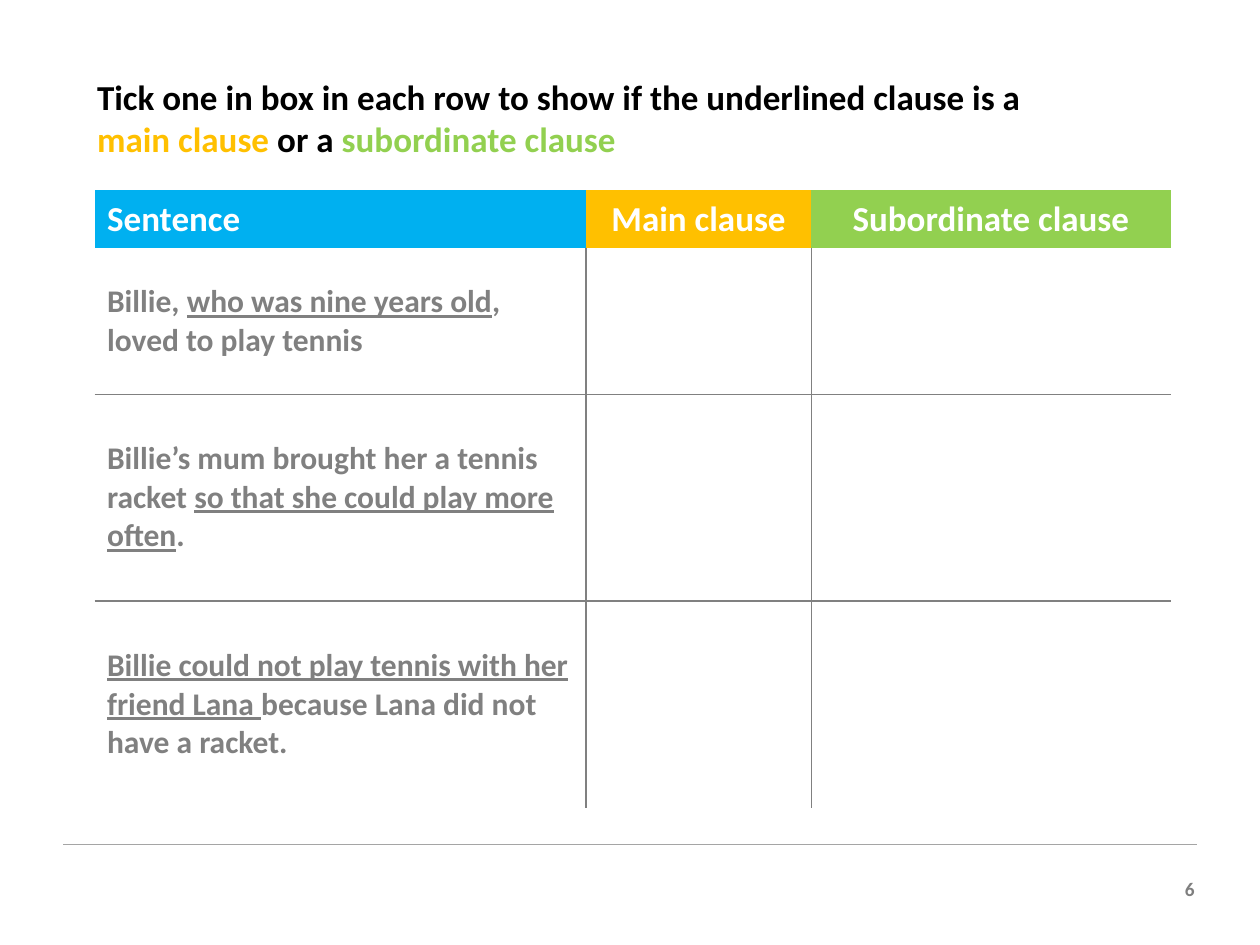
from pptx import Presentation
from pptx.dml.color import RGBColor
from pptx.enum.shapes import MSO_CONNECTOR
from pptx.enum.text import MSO_ANCHOR, MSO_AUTO_SIZE, PP_ALIGN
from pptx.oxml import parse_xml
from pptx.oxml.ns import nsdecls
from pptx.util import Inches, Pt

LINE = MSO_CONNECTOR.STRAIGHT
TOP, MIDDLE = MSO_ANCHOR.TOP, MSO_ANCHOR.MIDDLE
LEFT, CENTER, RIGHT = PP_ALIGN.LEFT, PP_ALIGN.CENTER, PP_ALIGN.RIGHT
TITLE_ONLY = 5
NO_GRID = "{2D5ABB26-0587-4C30-8999-92F81FD0307C}"

BLACK, WHITE, GRAY = "000000", "FFFFFF", "808080"
BLUE, AMBER, GREEN = "00B0F0", "FFC000", "92D050"
COLS = [3.9, 1.79, 2.85]
ROWS = [0.46, 1.16, 1.64, 1.64]

TITLE = [
    ("Tick one in box in each row to show if the underlined clause is a ", BLACK),
    ("main clause", AMBER),
    (" or a ", BLACK),
    ("subordinate clause", GREEN),
]
HEADS = [("Sentence", BLUE), ("Main clause", AMBER), ("Subordinate clause", GREEN)]
# Each sentence is a list of (text, underlined) parts.
SENTENCES = [
    [("Billie, ", False), ("who was nine years old", True),
     (", loved to play tennis", False)],
    [("Billie’s mum brought her a tennis racket ", False),
     ("so that she could play more often", True), (".", False)],
    [("Billie could not play tennis with her friend Lana ", True),
     ("because Lana did not have a racket.", False)],
]


def color(code):
    return RGBColor.from_string(code)


def write(frame, parts, size, align=LEFT):
    """Fill the first paragraph with bold (text, colour, underlined) runs."""
    para = frame.paragraphs[0]
    para.alignment = align
    for text, code, under in parts:
        run = para.add_run()
        run.text = text
        font = run.font
        font.name, font.size, font.bold = "Calibri", Pt(size), True
        font.color.rgb = color(code)
        if under:
            font.underline = True


def add_title(slide):
    title = slide.shapes.title
    title.left, title.top = Inches(0.67), Inches(0.55)
    title.width, title.height = Inches(7.65), Inches(0.77)
    frame = title.text_frame
    frame.vertical_anchor = TOP
    frame.auto_size = MSO_AUTO_SIZE.NONE
    write(frame, [(text, code, False) for text, code in TITLE], 20)


def add_border(cell, sides):
    """Draw thin gray edges on the given sides, listed in L, R, T, B order."""
    props = cell._tc.get_or_add_tcPr()
    for side in sides:
        props.append(parse_xml(
            f'<a:ln{side} {nsdecls("a")} w="{Pt(1)}"><a:solidFill>'
            f'<a:srgbClr val="{GRAY}"/></a:solidFill></a:ln{side}>'))


def paint(cell, code):
    cell.fill.solid()
    cell.fill.fore_color.rgb = color(code)
    cell.vertical_anchor = MIDDLE


def inner_sides(row, col):
    """Name the sides of a body cell that face another body cell."""
    tests = {"L": col > 0, "R": col < len(COLS) - 1,
             "T": row > 1, "B": row < len(ROWS) - 1}
    return [side for side, inner in tests.items() if inner]


def add_grid(slide):
    frame = slide.shapes.add_table(
        len(ROWS), len(COLS), Inches(0.75), Inches(1.51),
        Inches(sum(COLS)), Inches(sum(ROWS)))
    table = frame.table
    table.horz_banding = False
    table._tbl.tblPr[0].text = NO_GRID
    for col, width in zip(table.columns, COLS):
        col.width = Inches(width)
    for row, height in zip(table.rows, ROWS):
        row.height = Inches(height)

    for col, (text, code) in enumerate(HEADS):
        cell = table.cell(0, col)
        paint(cell, code)
        write(cell.text_frame, [(text, WHITE, False)], 20, CENTER if col else LEFT)

    for row, parts in enumerate(SENTENCES, 1):
        for col in range(len(COLS)):
            cell = table.cell(row, col)
            add_border(cell, inner_sides(row, col))
            paint(cell, WHITE)
        write(table.cell(row, 0).text_frame,
              [(text, GRAY, under) for text, under in parts], 18)


def add_footer(slide):
    rule = slide.shapes.add_connector(
        LINE, Inches(0.5), Inches(6.7), Inches(9.5), Inches(6.7))
    rule.line.color.rgb = color("A5A5A5")
    rule.line.width = Pt(0.75)
    rule._element.spPr.append(parse_xml(f'<a:effectLst {nsdecls("a")}/>'))
    box = slide.shapes.add_textbox(
        Inches(9.2), Inches(6.91), Inches(0.38), Inches(0.29))
    box.text_frame.word_wrap = True
    write(box.text_frame, [("6", "7F7F7F", False)], 11, RIGHT)


def main():
    deck = Presentation()
    deck.slide_width, deck.slide_height = Inches(10), Inches(7.5)
    slide = deck.slides.add_slide(deck.slide_layouts[TITLE_ONLY])
    add_footer(slide)
    add_grid(slide)
    add_title(slide)
    deck.save("out.pptx")


if __name__ == "__main__":
    main()
